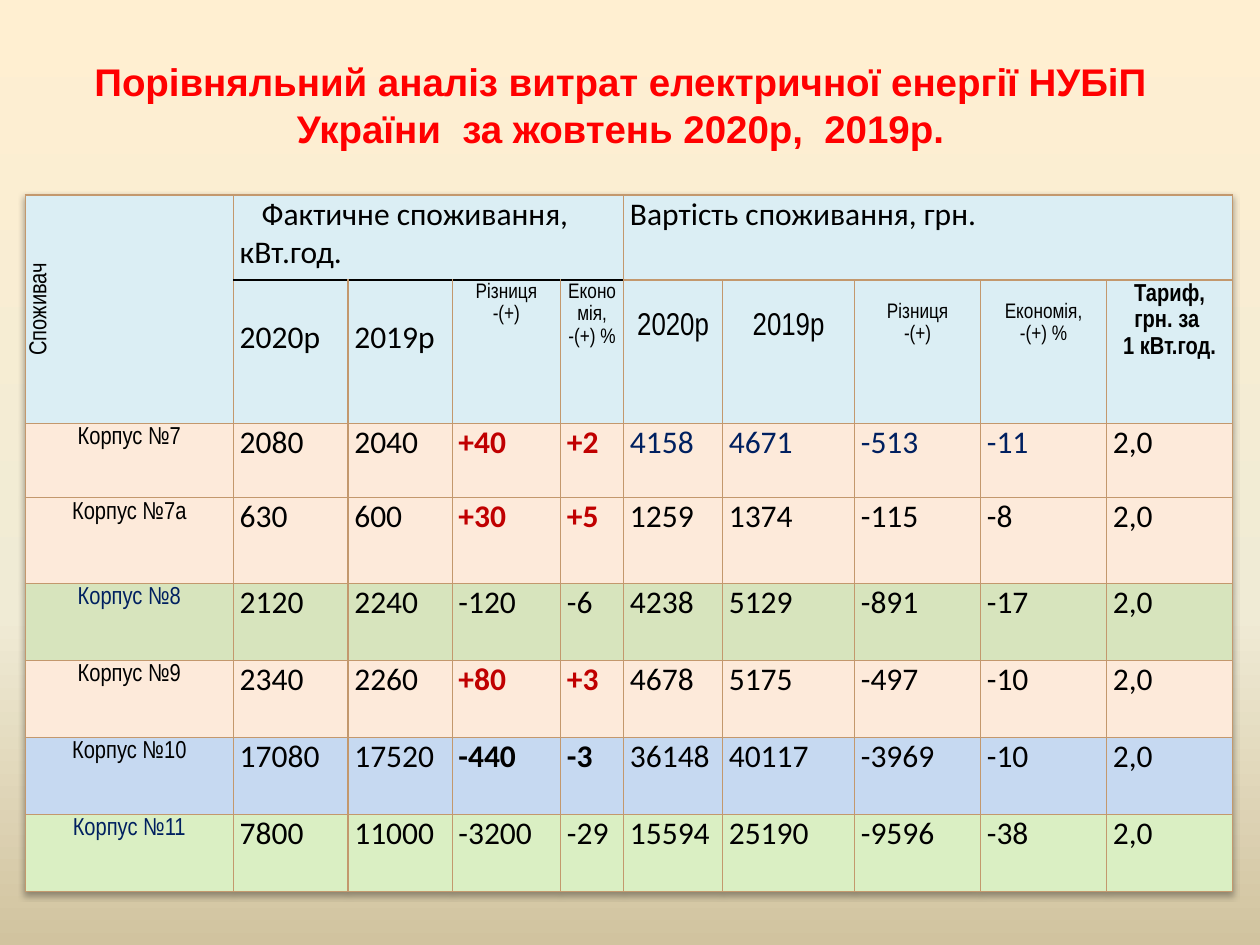
from copy import deepcopy
from dataclasses import dataclass

from lxml.etree import SubElement
from pptx import Presentation
from pptx.dml.color import RGBColor
from pptx.enum.text import MSO_ANCHOR, PP_ALIGN
from pptx.oxml import parse_xml
from pptx.oxml.ns import nsdecls, qn
from pptx.util import Pt

RED = RGBColor(0xFF, 0x00, 0x00)
DARK_RED = RGBColor(0xC0, 0x00, 0x00)
NAVY = RGBColor(0x00, 0x20, 0x60)
BLACK = RGBColor(0x00, 0x00, 0x00)
TAN = RGBColor(0xC3, 0x98, 0x6D)
PALE_BLUE = RGBColor(0xDB, 0xEE, 0xF4)
PEACH = RGBColor(0xFD, 0xEA, 0xDA)
OLIVE = RGBColor(0xD7, 0xE4, 0xBD)
BLUE = RGBColor(0xC6, 0xD9, 0xF1)
GREEN = RGBColor(0xDA, 0xEF, 0xC3)
BACKGROUND = [
    (0, RGBColor(0xFF, 0xEF, 0xD1)),
    (0.65, RGBColor(0xF0, 0xEB, 0xD5)),
    (1, RGBColor(0xD1, 0xC3, 0x9F)),
]

COLUMNS = [119, 65.5, 59.5, 62, 36, 56.5, 75.5, 72, 72, 72]
ROWS = [48.5, 82, 42.5, 49, 44, 44, 44, 44]

SUBHEADS = [
    ("2020р", 18, 22, False),
    ("2019р", 18, 22, False),
    ("Різниця\n-(+)", 12, 0, True),
    ("Економія,\n-(+) %", 12, 0, True),
    ("2020р", 18, 16, True),
    ("2019р", 18, 16, True),
    ("Різниця\n-(+)", 12, 11.5, True),
    ("Економія,\n-(+) %", 12, 11.5, True),
    ("Тариф,\nгрн. за \n1 кВт.год.", 14, 0, True),
]

BUILDINGS = [
    ("Корпус №7", "2080 2040 +40 +2 4158 4671 -513 -11 2,0", PEACH, BLACK),
    ("Корпус №7а", "630 600 +30 +5 1259 1374 -115 -8 2,0", PEACH, BLACK),
    ("Корпус №8", "2120 2240 -120 -6 4238 5129 -891 -17 2,0", OLIVE, NAVY),
    ("Корпус №9", "2340 2260 +80 +3 4678 5175 -497 -10 2,0", PEACH, BLACK),
    ("Корпус №10", "17080 17520 -440 -3 36148 40117 -3969 -10 2,0", BLUE, BLACK),
    ("Корпус №11", "7800 11000 -3200 -29 15594 25190 -9596 -38 2,0", GREEN, NAVY),
]


@dataclass
class Deck:
    """Style and current slide, with a method for each kind of element."""

    s: object
    font: str = "Calibri"
    narrow: str = "Arial Narrow"
    title_font: str = "Arial"

    def background(self, stops):
        fill = self.s.background.fill
        fill.gradient()
        fill.gradient_angle = 270
        gs_lst = self.s.element.find(".//" + qn("a:gsLst"))
        gs_lst.insert(1, deepcopy(gs_lst[0]))
        for stop, (position, color) in zip(fill.gradient_stops, stops):
            stop.position = position
            stop.color.rgb = color

    def set_text(self, tf, text, size, font, color=BLACK, bold=False, align=PP_ALIGN.LEFT, spacing=1):
        tf.text = text
        for p in tf.paragraphs:
            p.alignment = align
            p.line_spacing = spacing
            for r in p.runs:
                r.font.size = Pt(size)
                r.font.name = font
                r.font.bold = bold
                r.font.color.rgb = color

    def title(self, text, left, top, width, height):
        sp = self.s.shapes.title
        sp.left, sp.top, sp.width, sp.height = Pt(left), Pt(top), Pt(width), Pt(height)
        tf = sp.text_frame
        tf.word_wrap = True
        tf.vertical_anchor = MSO_ANCHOR.MIDDLE
        tf.margin_bottom = Pt(30)
        self.set_text(tf, text, 22, self.title_font, RED, True, PP_ALIGN.CENTER)

    def table(self, left, top, columns, rows):
        frame = self.s.shapes.add_table(
            len(rows), len(columns), Pt(left), Pt(top), Pt(sum(columns)), Pt(sum(rows))
        )
        table = frame.table
        for column, width in zip(table.columns, columns):
            column.width = Pt(width)
        for row, height in zip(table.rows, rows):
            row.height = Pt(height)
        shadow = parse_xml(
            f'<a:effectLst {nsdecls("a")}><a:outerShdw blurRad="40000" dist="23000" dir="5400000" '
            'rotWithShape="0"><a:srgbClr val="000000"><a:alpha val="35000"/></a:srgbClr>'
            "</a:outerShdw></a:effectLst>"
        )
        frame.element.find(".//" + qn("a:tblPr")).insert(0, shadow)
        return table

    def border(self, cell, black_side=None):
        tcPr = cell._tc.get_or_add_tcPr()
        for i, side in enumerate(("lnL", "lnR", "lnT", "lnB")):
            color, width = (BLACK, 1) if side == black_side else (TAN, 0.79)
            ln = tcPr.makeelement(qn("a:" + side), {"w": str(int(Pt(width)))})
            fill = SubElement(ln, qn("a:solidFill"))
            SubElement(fill, qn("a:srgbClr"), val=str(color))
            tcPr.insert(i, ln)

    def cell(self, cell, fill, text="", size=18, inset=0, narrow=False, color=BLACK, bold=False, black_side=None):
        cell.margin_left = cell.margin_right = Pt(3.6)
        cell.margin_top, cell.margin_bottom = Pt(inset), 0
        cell.fill.solid()
        cell.fill.fore_color.rgb = fill
        self.border(cell, black_side)
        if text:
            font = self.narrow if narrow else self.font
            align = PP_ALIGN.CENTER if narrow else PP_ALIGN.LEFT
            self.set_text(cell.text_frame, text, size, font, color, bold, align, 1.15 if narrow else 1)


def add_header(deck, table):
    heads = {0: "Споживач", 1: "Фактичне споживання, кВт.год.", 5: "Вартість споживання, грн."}
    for c in range(len(COLUMNS)):
        deck.cell(
            table.cell(0, c), PALE_BLUE, heads.get(c, ""), 18 if c else 14,
            narrow=c == 0, black_side="lnB" if 1 <= c <= 4 else None,
        )
    deck.cell(table.cell(1, 0), PALE_BLUE)
    for c, (text, size, inset, narrow) in enumerate(SUBHEADS, 1):
        deck.cell(
            table.cell(1, c), PALE_BLUE, text, size, inset, narrow,
            bold=c == 9, black_side="lnT" if c <= 4 else None,
        )
    consumer, usage, cost = (table.cell(0, c) for c in heads)
    consumer.merge(table.cell(1, 0))
    usage.merge(table.cell(0, 4))
    cost.merge(table.cell(0, 9))
    consumer.vertical_anchor = MSO_ANCHOR.MIDDLE
    consumer._tc.get_or_add_tcPr().set("vert", "vert270")
    pPr = usage.text_frame.paragraphs[0]._p.get_or_add_pPr()
    pPr.set("marL", "0")
    pPr.set("indent", str(int(Pt(12.5))))


def add_buildings(deck, table):
    for i, (name, values, fill, name_color) in enumerate(BUILDINGS):
        deck.cell(table.cell(i + 2, 0), fill, name, 14, narrow=True, color=name_color)
        for c, value in enumerate(values.split(), 1):
            rise = value.startswith("+")
            color = DARK_RED if rise else NAVY if i == 0 and 5 <= c <= 8 else BLACK
            bold = rise or (fill == BLUE and c in (3, 4))
            deck.cell(table.cell(i + 2, c), fill, value, color=color, bold=bold)


def main():
    prs = Presentation()
    prs.slide_width, prs.slide_height = Pt(720), Pt(540)
    deck = Deck(prs.slides.add_slide(prs.slide_layouts[5]))
    deck.background(BACKGROUND)
    deck.title(
        "Порівняльний аналіз витрат електричної енергії НУБіП України  за жовтень 2020р,  2019р.",
        14.4, 15, 680.5, 116,
    )
    table = deck.table(14.4, 111.5, COLUMNS, ROWS)
    add_header(deck, table)
    add_buildings(deck, table)
    prs.save("out.pptx")


if __name__ == "__main__":
    main()
